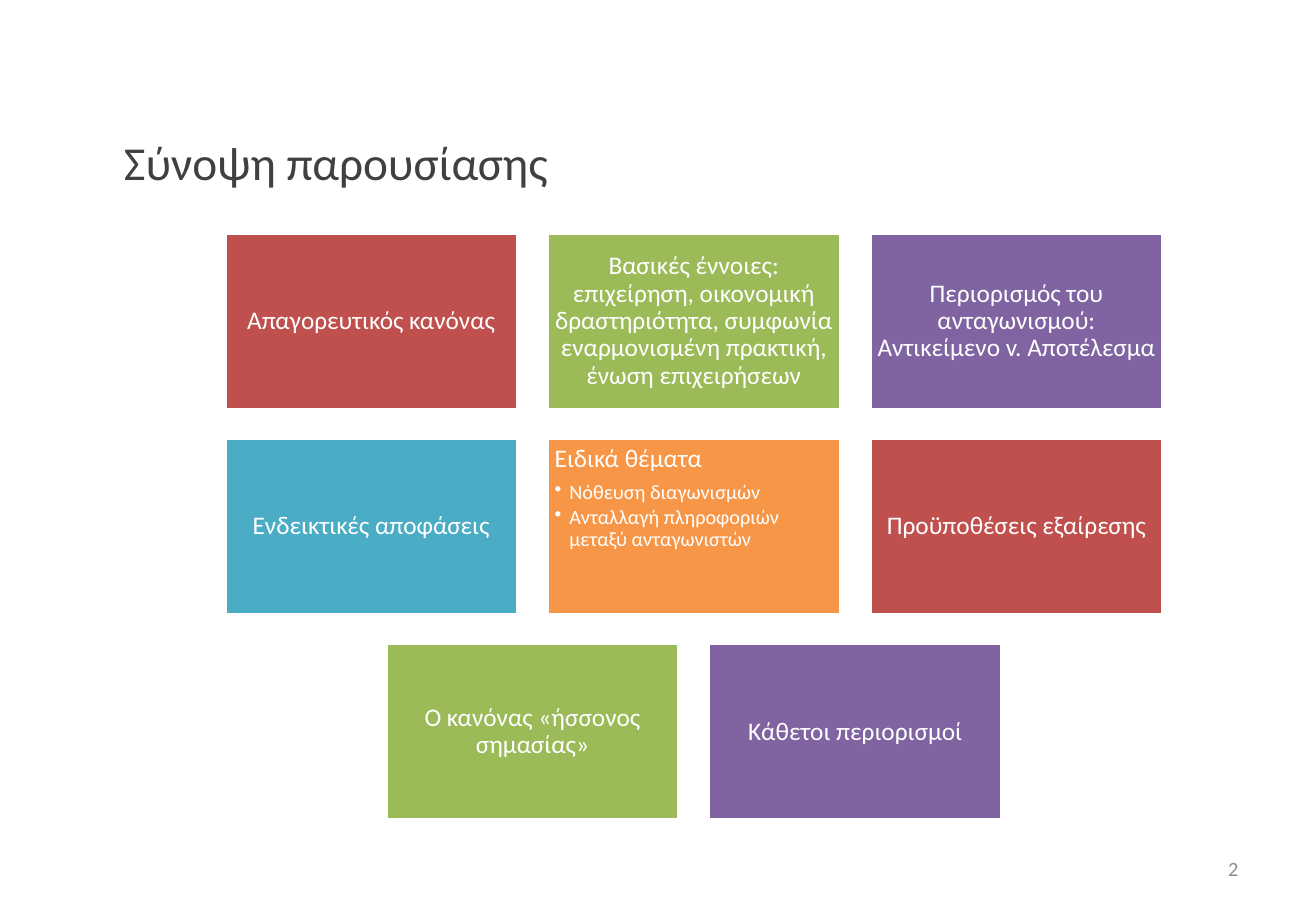
from lxml import etree
from pptx import Presentation
from pptx.dml.color import RGBColor
from pptx.enum.shapes import MSO_SHAPE
from pptx.enum.text import MSO_ANCHOR, MSO_AUTO_SIZE, PP_ALIGN
from pptx.oxml.ns import qn
from pptx.util import Inches, Pt

RECT = MSO_SHAPE.RECTANGLE
TOP, MIDDLE = MSO_ANCHOR.TOP, MSO_ANCHOR.MIDDLE
LEFT, CENTER, RIGHT = PP_ALIGN.LEFT, PP_ALIGN.CENTER, PP_ALIGN.RIGHT
NO_FIT = MSO_AUTO_SIZE.NONE
TITLE_ONLY = 5

FONT = "Calibri"
COLORS = {
    "white": "FFFFFF", "title": "404040", "number": "8C8C8C",
    "red": "C0504D", "green": "9BBB59", "purple": "8064A2",
    "blue": "4BACC6", "orange": "F79646",
}

# Tile grid in inches: origin, tile size and distance between tile starts
GRID_X, GRID_Y = 1.85, 1.92
TILE_W, TILE_H = 2.41, 1.45
STEP_X, STEP_Y = 2.655, 1.69
COLUMNS = 3

TILE_ROWS = [
    [("red", "Απαγορευτικός κανόνας", []),
     ("green", "Βασικές έννοιες: επιχείρηση, οικονομική δραστηριότητα, "
               "συμφωνία εναρμονισμένη πρακτική, ένωση επιχειρήσεων", []),
     ("purple", "Περιορισμός του ανταγωνισμού: Αντικείμενο v. Αποτέλεσμα", [])],
    [("blue", "Ενδεικτικές αποφάσεις", []),
     ("orange", "Ειδικά θέματα", ["Νόθευση διαγωνισμών",
                                  "Ανταλλαγή πληροφοριών μεταξύ ανταγωνιστών"]),
     ("red", "Προϋποθέσεις εξαίρεσης", [])],
    [("green", "Ο κανόνας «ήσσονος σημασίας»", []),
     ("purple", "Κάθετοι περιορισμοί", [])],
]


class Deck:
    def __init__(self, width, height):
        self.prs = Presentation()
        self.prs.slide_width, self.prs.slide_height = Inches(width), Inches(height)
        self.s = self.prs.slides.add_slide(self.prs.slide_layouts[TITLE_ONLY])

    def rgb(self, name):
        return RGBColor.from_string(COLORS[name])

    def style(self, p, size, color, align=LEFT):
        p.alignment = align
        for r in p.runs:
            r.font.name, r.font.size = FONT, Pt(size)
            r.font.color.rgb = self.rgb(color)

    def fill_text(self, sp, text, size, color, align=LEFT):
        tf = sp.text_frame
        tf.text = text
        tf.word_wrap, tf.auto_size = True, NO_FIT
        tf.vertical_anchor = MIDDLE
        self.style(tf.paragraphs[0], size, color, align)
        return tf

    def title(self, text, x, y, w, h):
        sp = self.s.shapes.title
        sp.left, sp.top, sp.width, sp.height = map(Inches, (x, y, w, h))
        self.fill_text(sp, text, 28, "title")

    def page_number(self, text, x, y, w, h):
        sp = self.s.shapes.add_textbox(*map(Inches, (x, y, w, h)))
        self.fill_text(sp, text, 12, "number", RIGHT)

    def bullet(self, tf, text):
        p = tf.add_paragraph()
        p.text = text
        p.level = 1
        pPr = p._p.get_or_add_pPr()
        pPr.set("marL", str(Inches(0.12)))
        pPr.set("indent", str(-Inches(0.12)))
        etree.SubElement(pPr, qn("a:buChar")).set("char", "•")
        p.line_spacing, p.space_after = 0.9, Pt(1.8)
        self.style(p, 12, "white")

    def tile(self, column, row, color, text, bullets):
        """Place a tile on the grid; a fractional column centres a short row."""
        sp = self.s.shapes.add_shape(
            RECT, Inches(GRID_X + column * STEP_X), Inches(GRID_Y + row * STEP_Y),
            Inches(TILE_W), Inches(TILE_H))
        sp.shadow.inherit = False
        sp.fill.solid()
        sp.fill.fore_color.rgb = self.rgb(color)
        sp.line.color.rgb = self.rgb("white")
        sp.line.width = Pt(2)
        tf = self.fill_text(sp, text, 15, "white", LEFT if bullets else CENTER)
        tf.margin_left = tf.margin_right = Inches(0.06)
        tf.margin_top = tf.margin_bottom = Inches(0.06)
        p = tf.paragraphs[0]
        p.line_spacing = 0.9
        if bullets:
            tf.vertical_anchor = TOP
            p.space_after = Pt(5.25)
        for item in bullets:
            self.bullet(tf, item)


def main():
    deck = Deck(10.83, 7.5)
    deck.title("Σύνοψη παρουσίασης", 0.92, 0.85, 9.58, 0.96)
    for row, tiles in enumerate(TILE_ROWS):
        first = (COLUMNS - len(tiles)) / 2
        for i, (color, text, bullets) in enumerate(tiles):
            deck.tile(first + i, row, color, text, bullets)
    deck.page_number("2", 7.76, 6.95, 2.53, 0.4)
    deck.prs.save("out.pptx")


if __name__ == "__main__":
    main()
